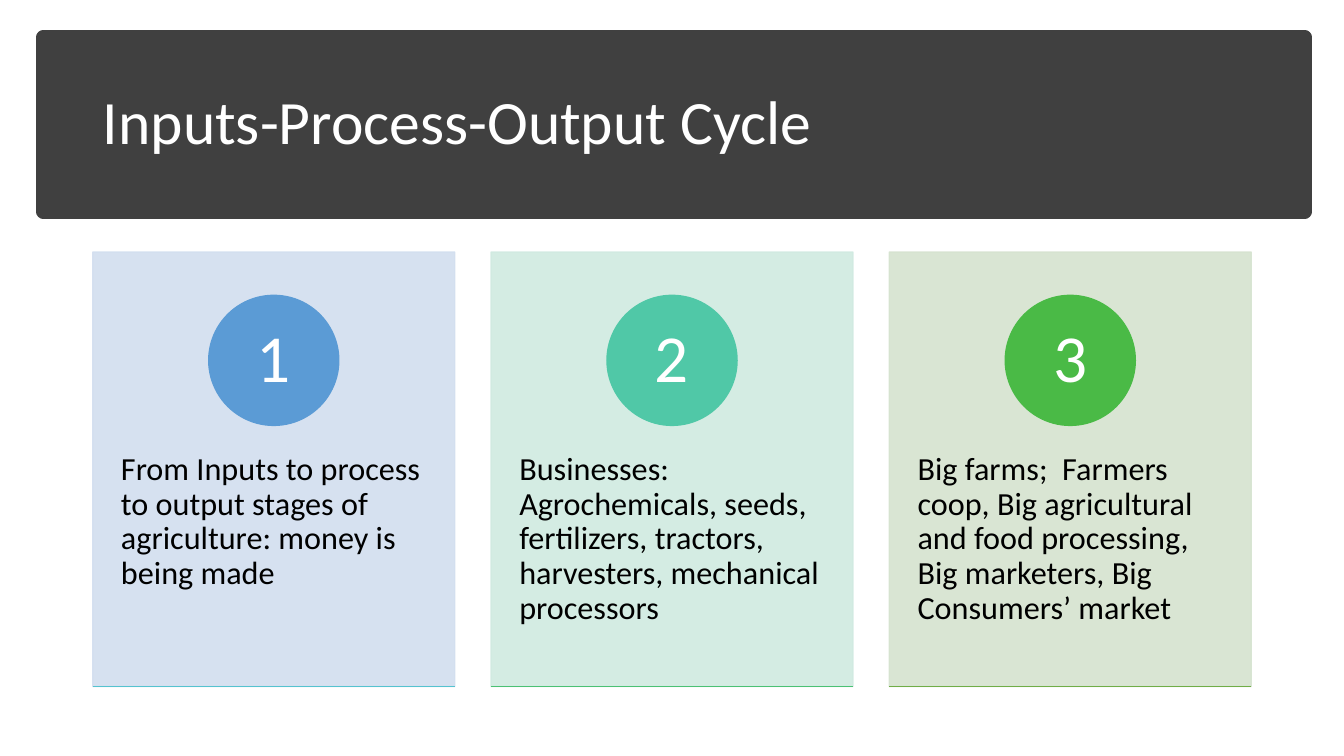
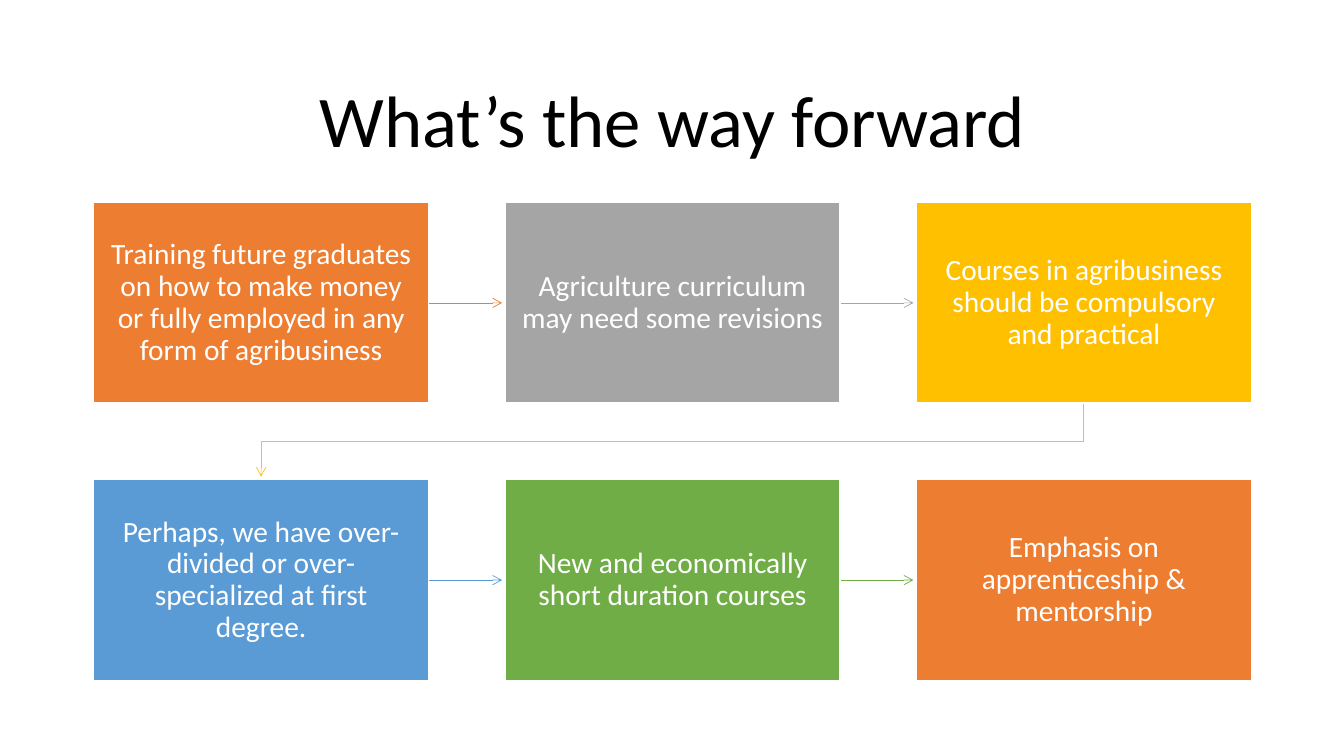
from dataclasses import dataclass

from lxml.etree import SubElement
from pptx import Presentation
from pptx.dml.color import RGBColor
from pptx.enum.shapes import MSO_CONNECTOR, MSO_SHAPE
from pptx.enum.text import MSO_ANCHOR, PP_ALIGN
from pptx.oxml.ns import qn
from pptx.presentation import Presentation as PresentationType
from pptx.shapes.autoshape import Shape
from pptx.shapes.connector import Connector
from pptx.slide import Slide
from pptx.util import Inches, Pt

COLORS: dict[str, str] = {
    "white": "FFFFFF",
    "black": "000000",
    "band": "404040",
    "orange": "ED7D31",
    "gray": "A5A5A5",
    "gold": "FFC000",
    "blue": "5B9BD5",
    "green": "70AD47",
    "pale blue": "D2DEEF",
    "pale teal": "D0EAE1",
    "pale green": "D5E3CF",
    "teal": "50C8A7",
    "bright green": "4ABA46",
    "aqua": "55C3CF",
    "sea green": "4BC174",
}
FONT = "Calibri"
CARD_LEFT, CARD_TOP, CARD_WIDTH, CARD_HEIGHT, CARD_PITCH = 0.92, 2.5, 3.59, 4.31, 3.95
CIRCLE_SIZE = 1.29
STEP_LEFT, STEP_TOP, STEP_WIDTH, STEP_HEIGHT = 0.93, 2.01, 3.32, 1.99
STEP_PITCH_X, STEP_PITCH_Y, STEPS_PER_ROW = 4.08, 2.75, 3
ARROW_LENGTH = 0.73


@dataclass(frozen=True)
class Box:
    left: float
    top: float
    width: float
    height: float


@dataclass(frozen=True)
class TextStyle:
    size: int
    color: str
    alignment: PP_ALIGN = PP_ALIGN.CENTER
    anchor: MSO_ANCHOR = MSO_ANCHOR.MIDDLE
    insets: tuple[float, float, float, float] = (0.1, 0.05, 0.1, 0.05)


@dataclass(frozen=True)
class Card:
    text: str
    background: str
    circle: str
    rule: str


@dataclass(frozen=True)
class Step:
    text: str
    color: str


CARD_TEXT = TextStyle(23, "black", PP_ALIGN.LEFT, MSO_ANCHOR.TOP, (0.28, 1.99, 0.28, 0.46))
NUMBER_TEXT = TextStyle(48, "white", insets=(0.1, 0.01, 0.1, 0.01))
STEP_TEXT = TextStyle(21, "white", insets=(0.16, 0.17, 0.16, 0.17))

CARDS = [
    Card(
        "From Inputs to process to output stages of agriculture: money is being made",
        "pale blue", "blue", "aqua",
    ),
    Card(
        "Businesses: Agrochemicals, seeds, fertilizers, tractors, harvesters, "
        "mechanical processors",
        "pale teal", "teal", "sea green",
    ),
    Card(
        "Big farms;  Farmers coop, Big agricultural and food processing, "
        "Big marketers, Big Consumers’ market",
        "pale green", "bright green", "green",
    ),
]
STEPS = [
    Step(
        "Training future graduates on how to make money or fully employed "
        "in any form of agribusiness",
        "orange",
    ),
    Step("Agriculture curriculum may need some revisions", "gray"),
    Step("Courses in agribusiness should be compulsory and practical", "gold"),
    Step("Perhaps, we have over-divided or over-specialized at first degree.", "blue"),
    Step("New and economically short duration courses", "green"),
    Step("Emphasis on apprenticeship & mentorship", "orange"),
]


def rgb(name: str) -> RGBColor:
    return RGBColor.from_string(COLORS[name])


def write_text(shape: Shape, text: str, style: TextStyle) -> None:
    frame = shape.text_frame
    frame.word_wrap = True
    frame.vertical_anchor = style.anchor
    frame.margin_left, frame.margin_top, frame.margin_right, frame.margin_bottom = (
        Inches(inset) for inset in style.insets
    )
    frame.text = text
    paragraph = frame.paragraphs[0]
    paragraph.alignment = style.alignment
    paragraph.line_spacing = 0.9
    paragraph.font.name = FONT
    paragraph.font.size = Pt(style.size)
    paragraph.font.color.rgb = rgb(style.color)


def add_filled(
    slide: Slide, kind: MSO_SHAPE, box: Box, fill: str, line: str, line_width: float = 1
) -> Shape:
    shape = slide.shapes.add_shape(
        kind, Inches(box.left), Inches(box.top), Inches(box.width), Inches(box.height)
    )
    shape.shadow.inherit = False
    shape.fill.solid()
    shape.fill.fore_color.rgb = rgb(fill)
    shape.line.color.rgb = rgb(line)
    shape.line.width = Pt(line_width)
    return shape


def make_translucent(shape: Shape, percent: int) -> None:
    for color in shape.element.spPr.iter(qn("a:srgbClr")):
        SubElement(color, qn("a:alpha"), val=str(percent * 1000))


def add_line(
    slide: Slide, start: tuple[float, float], end: tuple[float, float], color: str, width: float
) -> Connector:
    connector = slide.shapes.add_connector(
        MSO_CONNECTOR.STRAIGHT, *(Inches(value) for value in (*start, *end))
    )
    connector.line.color.rgb = rgb(color)
    connector.line.width = Pt(width)
    SubElement(connector.element.spPr, qn("a:effectLst"))
    return connector


def add_arrowhead(shape: Shape | Connector) -> None:
    line = shape.element.spPr.find(qn("a:ln"))
    SubElement(line, qn("a:tailEnd"), type="arrow")


def add_bent_arrow(slide: Slide, points: list[tuple[float, float]], color: str) -> None:
    corners = [(Inches(x), Inches(y)) for x, y in points]
    builder = slide.shapes.build_freeform(*corners[0])
    builder.add_line_segments(corners[1:], close=False)
    arrow = builder.convert_to_shape()
    arrow.shadow.inherit = False
    arrow.fill.background()
    arrow.line.color.rgb = rgb(color)
    arrow.line.width = Pt(0.5)
    add_arrowhead(arrow)


def add_titled_slide(
    presentation: PresentationType, title: str, box: Box, style: TextStyle
) -> Slide:
    slide = presentation.slides.add_slide(presentation.slide_layouts.get_by_name("Title Only"))
    placeholder = slide.shapes.title
    placeholder.left, placeholder.top = Inches(box.left), Inches(box.top)
    placeholder.width, placeholder.height = Inches(box.width), Inches(box.height)
    write_text(placeholder, title, style)
    return slide


def draw_card(slide: Slide, index: int, card: Card) -> None:
    left = CARD_LEFT + index * CARD_PITCH
    bottom = CARD_TOP + CARD_HEIGHT
    panel = add_filled(
        slide, MSO_SHAPE.RECTANGLE, Box(left, CARD_TOP, CARD_WIDTH, CARD_HEIGHT),
        card.background, card.background,
    )
    make_translucent(panel, 90)
    write_text(panel, card.text, CARD_TEXT)
    circle_left = left + (CARD_WIDTH - CIRCLE_SIZE) / 2
    circle = add_filled(
        slide, MSO_SHAPE.OVAL, Box(circle_left, CARD_TOP + 0.43, CIRCLE_SIZE, CIRCLE_SIZE),
        card.circle, card.circle,
    )
    write_text(circle, str(index + 1), NUMBER_TEXT)
    add_line(slide, (left, bottom), (left + CARD_WIDTH, bottom), card.rule, 1)


def step_box(index: int) -> Box:
    row, column = divmod(index, STEPS_PER_ROW)
    return Box(
        STEP_LEFT + column * STEP_PITCH_X, STEP_TOP + row * STEP_PITCH_Y, STEP_WIDTH, STEP_HEIGHT
    )


def draw_step_arrow(slide: Slide, index: int, color: str) -> None:
    box, following = step_box(index), step_box(index + 1)
    if following.top == box.top:
        start, middle = box.left + box.width, box.top + box.height / 2
        add_arrowhead(
            add_line(slide, (start, middle), (start + ARROW_LENGTH, middle), color, 0.5)
        )
    else:
        start_x, end_x = box.left + box.width / 2, following.left + box.width / 2
        bottom = box.top + box.height
        turn = (bottom + following.top) / 2
        add_bent_arrow(
            slide,
            [(start_x, bottom), (start_x, turn), (end_x, turn), (end_x, bottom + ARROW_LENGTH)],
            color,
        )


def draw_step(slide: Slide, index: int, step: Step) -> None:
    if index + 1 < len(STEPS):
        draw_step_arrow(slide, index, step.color)
    shape = add_filled(slide, MSO_SHAPE.RECTANGLE, step_box(index), step.color, "white")
    write_text(shape, step.text, STEP_TEXT)


def build_cycle_slide(presentation: PresentationType) -> None:
    slide = add_titled_slide(
        presentation, "Inputs-Process-Output Cycle", Box(0.92, 0.51, 11.5, 1.45),
        TextStyle(44, "white", PP_ALIGN.LEFT),
    )
    band = add_filled(
        slide, MSO_SHAPE.RECTANGLE, Box(0.43, 0.37, 12.51, 1.73), "band", "band", 10
    )
    slide.shapes.title.element.addprevious(band.element)
    for index, card in enumerate(CARDS):
        draw_card(slide, index, card)


def build_forward_slide(presentation: PresentationType) -> None:
    slide = add_titled_slide(
        presentation, "What’s the way forward", Box(0.92, 0.61, 11.5, 1.24),
        TextStyle(52, "black"),
    )
    for index, step in enumerate(STEPS):
        draw_step(slide, index, step)


def main() -> None:
    presentation = Presentation()
    presentation.slide_width = Inches(13.33)
    presentation.slide_height = Inches(7.5)
    build_cycle_slide(presentation)
    build_forward_slide(presentation)
    presentation.save("out.pptx")


if __name__ == "__main__":
    main()
